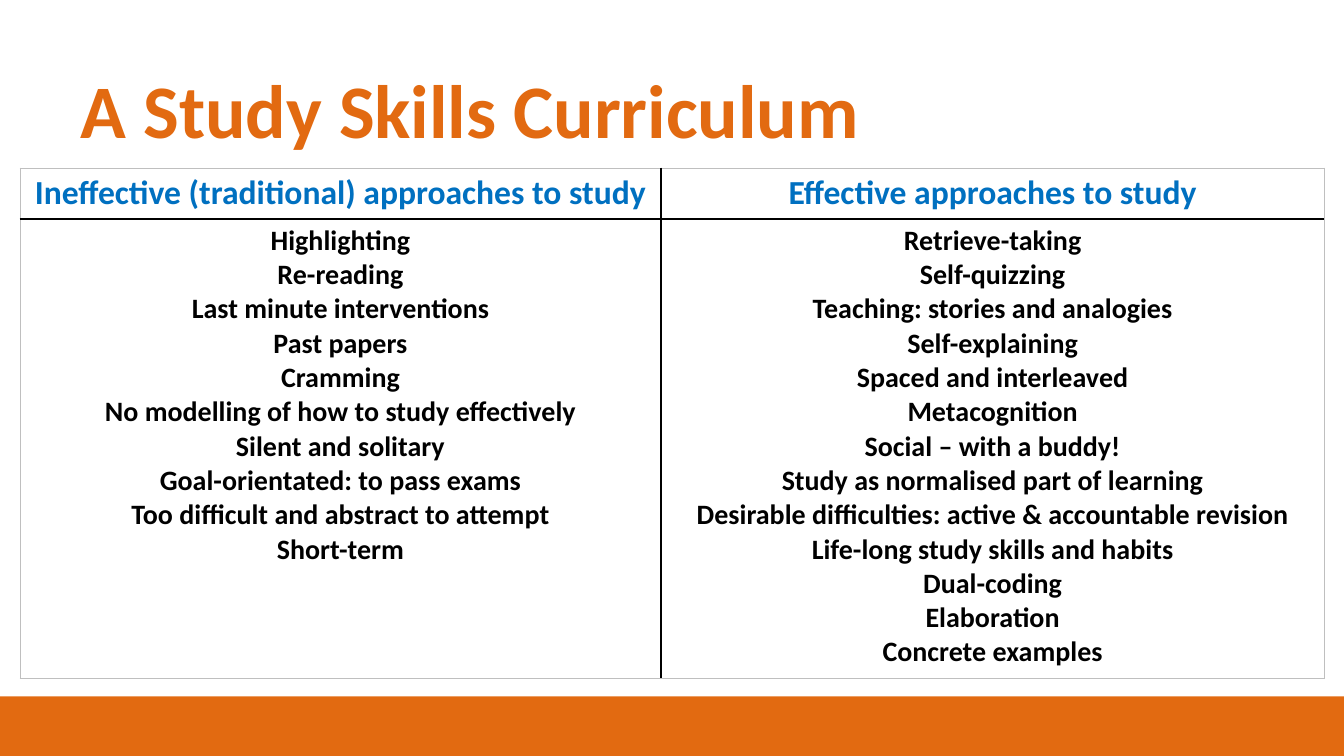
from lxml import etree
from pptx import Presentation
from pptx.dml.color import RGBColor
from pptx.enum.shapes import MSO_SHAPE as SHAPE
from pptx.enum.text import MSO_ANCHOR as ANCHOR, PP_ALIGN as ALIGN
from pptx.oxml.ns import qn
from pptx.util import Cm, Pt

ORANGE = RGBColor(0xE2, 0x6A, 0x11)
BLUE = RGBColor(0x00, 0x70, 0xC0)
BLACK = RGBColor(0x00, 0x00, 0x00)
GREY = RGBColor(0xBF, 0xBF, 0xBF)
FONT = "Calibri"

APPROACHES = [
    ("Ineffective (traditional) approaches to study", [
        "Highlighting",
        "Re-reading",
        "Last minute interventions",
        "Past papers",
        "Cramming",
        "No modelling of how to study effectively",
        "Silent and solitary",
        "Goal-orientated: to pass exams",
        "Too difficult and abstract to attempt",
        "Short-term",
    ]),
    ("Effective approaches to study", [
        "Retrieve-taking",
        "Self-quizzing",
        "Teaching: stories and analogies",
        "Self-explaining",
        "Spaced and interleaved",
        "Metacognition",
        "Social – with a buddy!",
        "Study as normalised part of learning",
        "Desirable difficulties: active & accountable revision",
        "Life-long study skills and habits",
        "Dual-coding",
        "Elaboration",
        "Concrete examples",
    ]),
]


def add_run(p, text, size, color):
    r = p.add_run()
    r.text = text
    r.font.name = FONT
    r.font.size = Pt(size)
    r.font.bold = True
    r.font.color.rgb = color


def add_footer(s, left, top, width, height):
    sp = s.shapes.add_shape(SHAPE.RECTANGLE, left, top, width, height)
    sp.shadow.inherit = False
    sp.fill.solid()
    sp.fill.fore_color.rgb = ORANGE
    sp.line.fill.background()


def add_title(s, left, top, width, height, text):
    tf = s.shapes.add_textbox(left, top, width, height).text_frame
    tf.word_wrap = True
    tf.vertical_anchor = ANCHOR.TOP
    p = tf.paragraphs[0]
    p.line_spacing = 0.9
    add_run(p, text, 54, ORANGE)


def set_borders(cell, borders):
    tc_pr = cell._tc.get_or_add_tcPr()
    for i, (side, (color, width)) in enumerate(borders.items()):
        ln = etree.Element(qn(f"a:ln{side}"), w=str(Pt(width)))
        fill = etree.SubElement(ln, qn("a:solidFill"))
        etree.SubElement(fill, qn("a:srgbClr"), val=str(color))
        tc_pr.insert(i, ln)


def fill_cell(cell, lines, size, color):
    cell.fill.background()
    tf = cell.text_frame
    for i, line in enumerate(lines):
        p = tf.add_paragraph() if i else tf.paragraphs[0]
        p.alignment = ALIGN.CENTER
        add_run(p, line, size, color)


def add_approaches(s, left, top, width, height):
    header_height, first_width = Cm(1.28), Cm(16.16)
    table = s.shapes.add_table(2, 2, left, top, width, height).table
    table.first_row = table.horz_banding = False
    table.columns[0].width = first_width
    table.columns[1].width = width - first_width
    table.rows[0].height = header_height
    table.rows[1].height = height - header_height

    outer, divider, header_rule = (GREY, 0.5), (BLACK, 1), (BLACK, 1.5)
    for col, (heading, items) in enumerate(APPROACHES):
        sides = {"L": divider if col else outer, "R": outer if col else divider}
        header, body = table.cell(0, col), table.cell(1, col)
        fill_cell(header, [heading], 24, BLUE)
        fill_cell(body, items, 20, BLACK)
        set_borders(header, {**sides, "T": outer, "B": header_rule})
        set_borders(body, {**sides, "T": header_rule, "B": outer})


def main():
    prs = Presentation()
    prs.slide_width, prs.slide_height = Cm(33.87), Cm(19.05)
    s = prs.slides.add_slide(prs.slide_layouts[6])
    footer_top = Cm(17.55)
    add_footer(s, 0, footer_top, prs.slide_width, prs.slide_height - footer_top)
    add_title(s, Cm(1.78), Cm(1.72), Cm(27.33), Cm(2.08), "A Study Skills Curriculum")
    add_approaches(s, Cm(0.5), Cm(4.23), Cm(32.87), Cm(12.86))
    prs.save("out.pptx")


if __name__ == "__main__":
    main()
